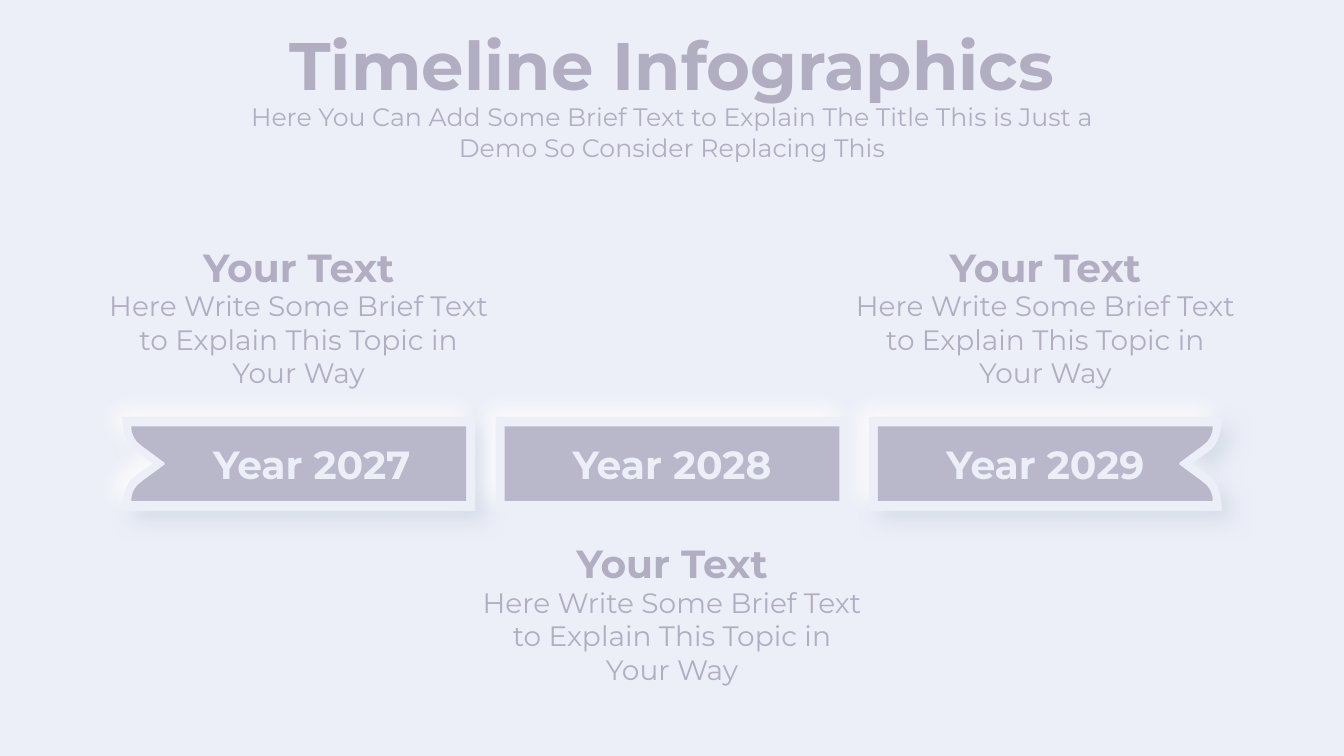
from lxml.etree import SubElement
from pptx import Presentation
from pptx.dml.color import RGBColor
from pptx.enum.shapes import MSO_SHAPE
from pptx.enum.text import MSO_AUTO_SIZE, PP_ALIGN
from pptx.oxml.ns import qn
from pptx.util import Inches, Pt

# Content
TITLE = "Timeline Infographics"
SUBTITLE = ("Here You Can Add Some Brief Text to Explain The Title This is Just a "
            "Demo So Consider Replacing This")
HEADING = "Your Text"
BODY = "Here Write Some Brief Text to Explain This Topic in Your Way"
# Year, notched side, caption top, shift of the year label, plate shadows
STEPS = [
    ("Year 2027", "left", 2.36, 0.13, ("dark", "light")),
    ("Year 2028", None, 5.3, 0, ("light",)),
    ("Year 2029", "right", 2.36, 0, ("dark", "light")),
]

# Style
FONT = "Montserrat"
PALE, MAUVE = "ECEFF8", "B1AEC2"
SHADOWS = {"dark": ("D1D9E6", 45), "light": ("FFFFFF", 225)}

# Layout in inches
WIDTH, HEIGHT = 13.33, 7.5
MIDDLE = WIDTH / 2
PITCH = WIDTH / 3.6
BAND_CENTER = 4.6
PLATE = (3.5, 0.93)
PANEL = (3.32, 0.74)
# Upper half of each notch: corner, two curve handles, curve end, tip
PLATE_NOTCH = [(0, 0), (0, 0.19), (0.06, 0.3), (0.14, 0.35), (0.3, 0.46)]
PANEL_NOTCH = [(0, 0), (0, 0.08), (0.04, 0.15), (0.1, 0.19), (0.33, 0.36)]
# Outline segments that form the upper and the lower curve
CURVES = (slice(0, 3), slice(6, 9))

presentation = Presentation()
presentation.slide_width = Inches(WIDTH)
presentation.slide_height = Inches(HEIGHT)
slide = presentation.slides.add_slide(presentation.slide_layouts[6])


def color(value):
    return RGBColor.from_string(value)


def add_text(text, center, top, width, height, size, bold=False, ink=MAUVE):
    box = slide.shapes.add_textbox(Inches(center - width / 2), Inches(top),
                                   Inches(width), Inches(height))
    frame = box.text_frame
    frame.word_wrap = True
    frame.auto_size = MSO_AUTO_SIZE.SHAPE_TO_FIT_TEXT
    paragraph = frame.paragraphs[0]
    paragraph.alignment = PP_ALIGN.CENTER
    run = paragraph.add_run()
    run.text = text
    run.font.name = FONT
    run.font.size = Pt(size)
    run.font.bold = bold
    run.font.color.rgb = color(ink)


def set_alpha(color_element, percent):
    SubElement(color_element, qn("a:alpha"), val=str(percent * 1000))


def add_shadow(shape, kind):
    value, angle = SHADOWS[kind]
    effects = shape._element.spPr.find(qn("a:effectLst"))
    shadow = SubElement(effects, qn("a:outerShdw"), blurRad=str(Pt(15)),
                        dist=str(Pt(10)), dir=str(angle * 60000),
                        algn="ctr", rotWithShape="0")
    set_alpha(SubElement(shadow, qn("a:srgbClr"), val=value), 80)


def bend(shape):
    """Turn each run of three straight segments in CURVES into one Bézier curve."""
    lines = list(shape._element.iter(qn("a:lnTo")))
    for part in CURVES:
        first, *others = lines[part]
        first.tag = qn("a:cubicBezTo")
        for line in others:
            first.append(line[0])
            line.getparent().remove(line)


def add_band(center, size, notch, side, fill):
    """Rectangle around the band's axis, with a notch cut in one side if asked."""
    width, height = size
    left, top = center - width / 2, BAND_CENTER - height / 2
    if side:
        lower = [(x, height - y) for x, y in reversed(notch)]
        outline = notch + lower + [(width, height), (width, 0)]
        if side == "right":
            outline = [(width - x, y) for x, y in outline]
        points = [(Inches(left + x), Inches(top + y)) for x, y in outline]
        builder = slide.shapes.build_freeform(*points[0])
        builder.add_line_segments(points[1:], close=True)
        shape = builder.convert_to_shape()
        bend(shape)
    else:
        shape = slide.shapes.add_shape(MSO_SHAPE.RECTANGLE, Inches(left), Inches(top),
                                       Inches(width), Inches(height))
    shape.shadow.inherit = False
    shape.line.fill.background()
    shape.fill.solid()
    shape.fill.fore_color.rgb = color(fill)
    return shape


# Background and title
slide.background.fill.solid()
slide.background.fill.fore_color.rgb = color(PALE)
add_text(TITLE, MIDDLE, 0.18, 8.73, 0.91, size=48, bold=True)
add_text(SUBTITLE, MIDDLE, 0.96, 8.73, 0.71, size=18)

# Timeline steps
for index, (year, side, caption_top, shift, shadows) in enumerate(STEPS):
    center = MIDDLE + (index - 1) * PITCH
    add_text(HEADING, center, caption_top, 3.3, 0.57, size=28, bold=True)
    add_text(BODY, center, caption_top + 0.455, 3.98, 1.11, size=20)
    for kind in shadows:
        add_shadow(add_band(center, PLATE, PLATE_NOTCH, side, PALE), kind)
    panel = add_band(center, PANEL, PANEL_NOTCH, side, MAUVE)
    set_alpha(panel._element.spPr.find(qn("a:solidFill"))[0], 85)
    add_text(year, center + shift, 4.32, 2.62, 0.57, size=28, bold=True, ink=PALE)

presentation.save("out.pptx")
